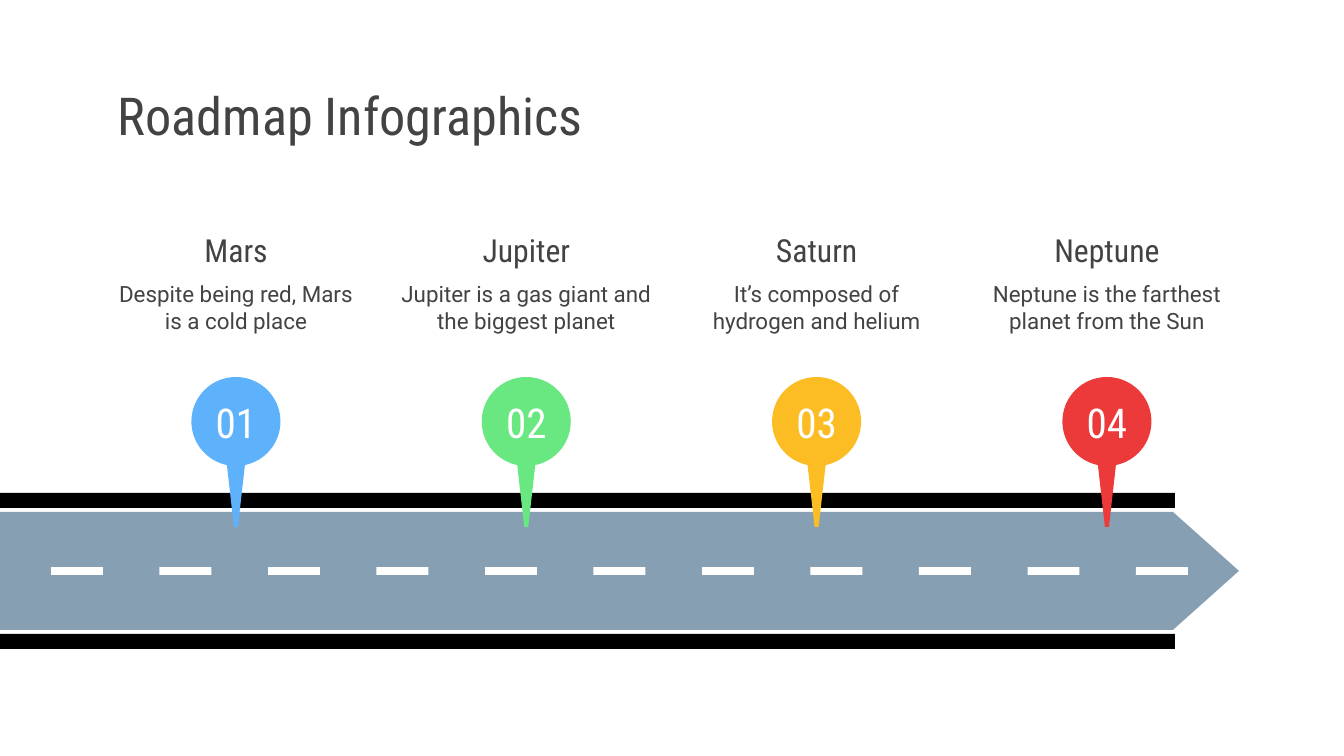
import math
from dataclasses import dataclass

import pptx
import pptx.dml.color
import pptx.enum.shapes
import pptx.enum.text
import pptx.util

ALIGN = pptx.enum.text.PP_ALIGN
ANCHOR = pptx.enum.text.MSO_ANCHOR


@dataclass(frozen=True)
class Theme:
    heading_font: str = "Roboto Condensed"
    body_font: str = "Roboto"
    ink: str = "434343"
    white: str = "FFFFFF"
    road: str = "869FB2"
    curb: str = "000000"
    title_size: int = 28
    number_size: int = 22
    heading_size: int = 17
    body_size: int = 12


THEME = Theme()
PX_PER_INCH = 134.4
PAGE_WIDTH, PAGE_HEIGHT = 1344, 756
INSET = 13


def emu(px):
    return pptx.util.Emu(round(px * 914400 / PX_PER_INCH))


def rgb(color):
    return pptx.dml.color.RGBColor.from_string(color)


class Page:
    """Holds the theme and the current slide, and draws elements on it."""

    def __init__(self, slide, theme):
        self.shapes = slide.shapes
        self.theme = theme

    def paint(self, shape, color):
        shape.fill.solid()
        shape.fill.fore_color.rgb = rgb(color)
        shape.line.fill.background()
        shape.shadow.inherit = False
        return shape

    def bar(self, left, top, width, height, color):
        kind = pptx.enum.shapes.MSO_SHAPE.RECTANGLE
        box = self.shapes.add_shape(kind, emu(left), emu(top), emu(width), emu(height))
        return self.paint(box, color)

    def outline(self, points, color):
        start, *others = [(emu(x), emu(y)) for x, y in points]
        builder = self.shapes.build_freeform(*start)
        builder.add_line_segments(others, close=True)
        return self.paint(builder.convert_to_shape(), color)

    def set_text(self, shape, text, font, size, color, align=ALIGN.CENTER,
                 anchor=ANCHOR.TOP, inset_top=INSET):
        frame = shape.text_frame
        frame.word_wrap = True
        frame.vertical_anchor = anchor
        frame.margin_left = frame.margin_right = frame.margin_bottom = emu(INSET)
        frame.margin_top = emu(inset_top)
        para = frame.paragraphs[0]
        para.text = text
        para.alignment = align
        para.font.name = font
        para.font.size = pptx.util.Pt(size)
        para.font.color.rgb = rgb(color)

    def label(self, left, top, width, height, text, font, size, **layout):
        box = self.shapes.add_textbox(emu(left), emu(top), emu(width), emu(height))
        self.set_text(box, text, font, size, self.theme.ink, **layout)

    def pin(self, center, top, number, color):
        radius, neck, tip, height = 44.5, 9, 2, 150
        # Round head, open at the bottom where the needle joins
        gap = math.degrees(math.asin(neck / radius))
        steps = 72
        angles = [math.radians(90 + gap + (360 - 2 * gap) * i / steps)
                  for i in range(steps + 1)]
        head = [(center + radius * math.cos(a), top + radius + radius * math.sin(a))
                for a in angles]
        needle = [(center + tip, top + height), (center - tip, top + height)]
        shape = self.outline(head + needle, color)
        self.set_text(shape, number, self.theme.heading_font, self.theme.number_size,
                      self.theme.white, inset_top=20)

    def milestone(self, center, number, color, heading, body):
        width = 277
        left = center - width / 2
        self.pin(center, 377, number, color)
        self.label(left, 218, width, 63, heading, self.theme.heading_font,
                   self.theme.heading_size, anchor=ANCHOR.MIDDLE)
        self.label(left, 267, width, 78, body, self.theme.body_font,
                   self.theme.body_size)


def main():
    deck = pptx.Presentation()
    deck.slide_width, deck.slide_height = emu(PAGE_WIDTH), emu(PAGE_HEIGHT)
    page = Page(deck.slides.add_slide(deck.slide_layouts[6]), THEME)

    # Title
    page.label(105, 79, 1136, 71, "Roadmap Infographics", THEME.heading_font,
               THEME.title_size, align=ALIGN.LEFT, anchor=ANCHOR.MIDDLE)

    # Road with its curbs and centre line
    page.outline([(0, 512), (0, 630), (1173, 630), (1239, 571), (1173, 512)], THEME.road)
    for top in (493, 634):
        page.bar(0, top, 1175, 15, THEME.curb)
    first, last, count = 51, 1136, 11
    for i in range(count):
        left = first + (last - first) * i / (count - 1)
        page.bar(left, 567, 52, 8, THEME.white)

    # Milestones
    milestones = [
        ("5EB2FC", "Mars", "Despite being red, Mars is a cold place"),
        ("69E781", "Jupiter", "Jupiter is a gas giant and the biggest planet"),
        ("FCBD24", "Saturn", "It’s composed of hydrogen and helium"),
        ("EC3A3B", "Neptune", "Neptune is the farthest planet from the Sun"),
    ]
    first, last = 236, 1107
    for i, (color, heading, body) in enumerate(milestones):
        center = first + (last - first) * i / (len(milestones) - 1)
        page.milestone(center, f"{i + 1:02}", color, heading, body)

    deck.save("out.pptx")


if __name__ == "__main__":
    main()
